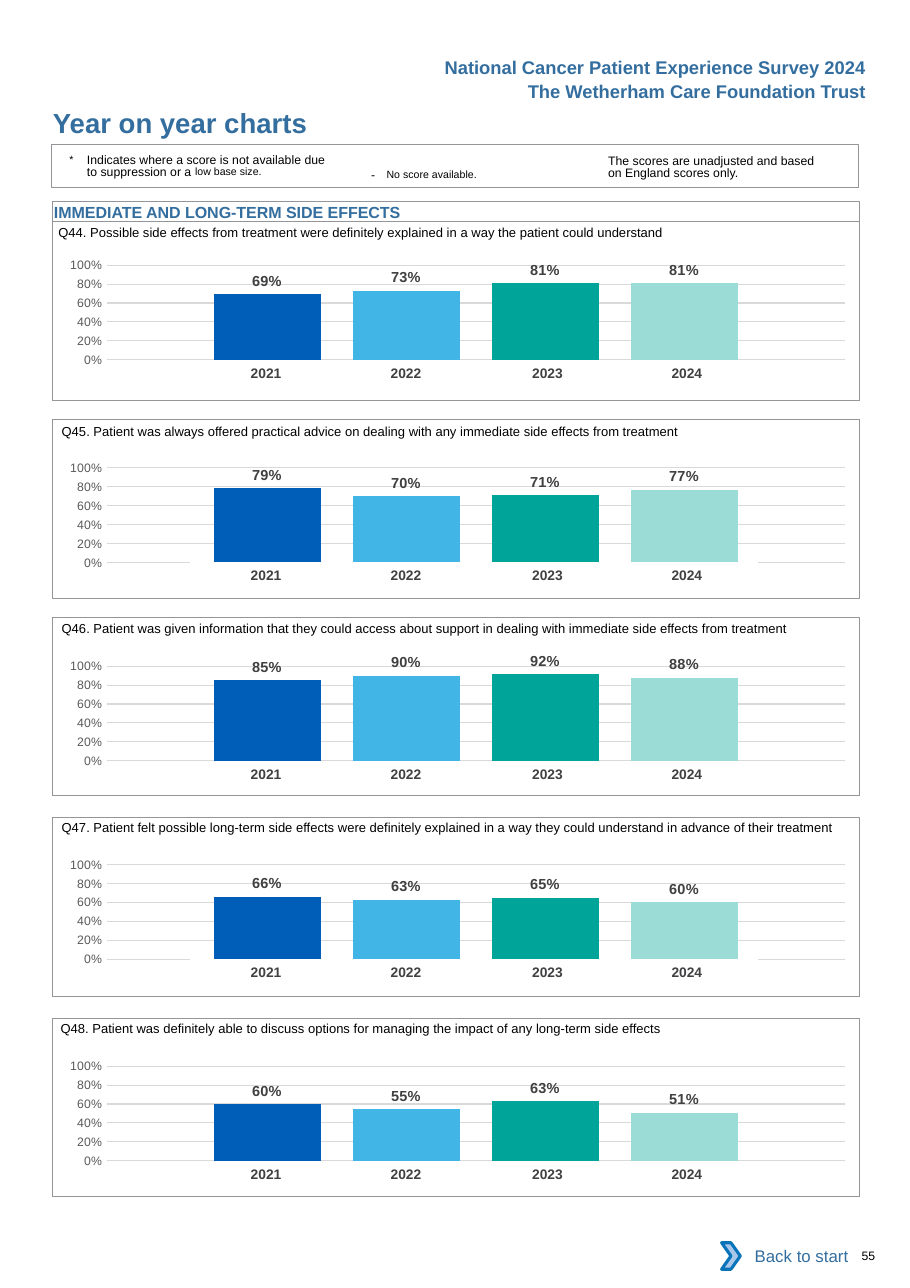
from dataclasses import dataclass

from lxml import etree
from pptx import Presentation, util as u
from pptx.chart.data import CategoryChartData
from pptx.dml.color import RGBColor
from pptx.enum import chart as ch, shapes, text
from pptx.oxml.ns import qn


@dataclass(frozen=True)
class Theme:
    font: str = "Arial"
    heading: str = "336E9F"
    ink: str = "000000"
    frame: str = "939598"
    year: str = "414042"
    label: str = "404040"
    axis: str = "595959"
    grid: str = "D9D9D9"
    white: str = "FFFFFF"
    arrow: str = "A8C7E9"
    arrow_edge: str = "0A74BB"
    bars: tuple = ("005EB8", "41B6E6", "00A499", "9CDCD7")
    title_size: float = 18
    banner_size: float = 12
    section_size: float = 10.5
    link_size: float = 11
    question_size: float = 8.5
    note_size: float = 8
    raised_size: float = 12
    label_size: float = 9.5
    year_size: float = 9


THEME = Theme()
YEARS = ("2021", "2022", "2023", "2024")
YEAR_WIDTHS = (1.27, 1.27, 1.34, 1.27)
YEAR_RIGHT_INSETS = (0, 0, 0.04, 0.12)
PANEL_LEFT, PANEL_WIDTH, PANEL_HEIGHT = 0.48, 7.32, 1.62
PLOT_AREA = {"x": 0.079, "y": 0.145, "w": 0.915, "h": 0.666}

# question, scores, frame top, chart top, question left, question top
PANELS = (
    ("Q44. Possible side effects from treatment were definitely explained in a way "
     "the patient could understand", (0.69, 0.73, 0.81, 0.81), 2.01, 2.22, 0.53, 1.95),
    ("Q45. Patient was always offered practical advice on dealing with any immediate "
     "side effects from treatment", (0.79, 0.70, 0.71, 0.77), 3.81, 4.06, 0.56, 3.75),
    ("Q46. Patient was given information that they could access about support in dealing "
     "with immediate side effects from treatment", (0.85, 0.90, 0.92, 0.88), 5.60, 5.86, 0.56, 5.54),
    ("Q47. Patient felt possible long-term side effects were definitely explained in a way "
     "they could understand in advance of their treatment", (0.66, 0.63, 0.65, 0.60), 7.42, 7.66, 0.56, 7.35),
    ("Q48. Patient was definitely able to discuss options for managing the impact of any "
     "long-term side effects", (0.60, 0.55, 0.63, 0.51), 9.24, 9.49, 0.55, 9.17),
)


def inches(*lengths):
    return [u.Inches(length) for length in lengths]


def rgb(color):
    return RGBColor.from_string(color)


def style_font(font, size, color, bold=False):
    font.name, font.size, font.bold = THEME.font, u.Pt(size), bold
    font.color.rgb = rgb(color)


def set_insets(holder, left, top, right, bottom):
    """Set the margins of a text frame or a table cell."""
    holder.margin_left, holder.margin_top, holder.margin_right, holder.margin_bottom = inches(
        left, top, right, bottom)


def write(frame, words, size, color, bold=False, align=text.PP_ALIGN.LEFT,
          insets=(0, 0, 0, 0), anchor=text.MSO_ANCHOR.TOP):
    set_insets(frame, *insets)
    frame.word_wrap, frame.vertical_anchor = True, anchor
    paragraph = frame.paragraphs[0]
    paragraph.text, paragraph.alignment = words, align
    style_font(paragraph.font, size, color, bold)
    return paragraph


def add_text(slide, area, words, size, color, **options):
    frame = slide.shapes.add_textbox(*inches(*area)).text_frame
    return write(frame, words, size, color, **options)


def add_outline(slide, area, line=None, width=0.5, fill=None, kind=shapes.MSO_SHAPE.RECTANGLE):
    outline = slide.shapes.add_shape(kind, *inches(*area))
    outline.shadow.inherit = False
    if fill:
        outline.fill.solid()
        outline.fill.fore_color.rgb = rgb(fill)
    else:
        outline.fill.background()
    if line:
        outline.line.color.rgb = rgb(line)
        outline.line.width = u.Pt(width)
    else:
        outline.line.fill.background()
    return outline


def hang(paragraph, indent):
    """Hang the paragraph so that its mark stands left of the text."""
    properties = paragraph._p.get_or_add_pPr()
    properties.set("marL", str(u.Inches(indent)))
    properties.set("indent", str(-u.Inches(indent)))


def add_raised(paragraph, words, percent):
    run = paragraph.add_run()
    run.text = words
    run.font.size = u.Pt(THEME.raised_size)
    run.font._element.set("baseline", str(percent * 1000))


def add_run(paragraph, words):
    paragraph.add_run().text = words


def add_notes(slide):
    size, ink = THEME.note_size, THEME.ink
    insets = (0, 0.03, 0, 0)
    unadjusted = add_text(slide, (5.52, 1.38, 2.01, 0.27),
                          "The scores are unadjusted and based on England scores only.",
                          size, ink, insets=insets)
    no_score = add_text(slide, (3.27, 1.41, 1.83, 0.24), "-\t", size, ink,
                        insets=(0.1, 0.05, 0.1, 0.05))
    hang(no_score, 0.14)
    add_raised(no_score, "No score available.", 3)
    suppressed = add_text(slide, (0.63, 1.38, 2.4, 0.27), "", size, ink, insets=insets)
    hang(suppressed, 0.16)
    add_raised(suppressed, "*\t", 3)
    add_run(suppressed, "Indicates where a score is not available due to suppression or a ")
    add_raised(suppressed, "low base size.", 7)
    for note in (unadjusted, suppressed):
        note.line_spacing = u.Pt(8.1)
    add_outline(slide, (0.47, 1.31, PANEL_WIDTH, 0.39), THEME.frame, 0.75)


def place_plot(chart):
    """Fix the inner plot area as fractions of the chart."""
    plot_area = chart._chartSpace.chart.plotArea
    for old in plot_area.findall(qn("c:layout")):
        plot_area.remove(old)
    layout = etree.Element(qn("c:layout"))
    manual = etree.SubElement(layout, qn("c:manualLayout"))
    settings = {"layoutTarget": "inner", "xMode": "edge", "yMode": "edge", **PLOT_AREA}
    for name, value in settings.items():
        etree.SubElement(manual, qn(f"c:{name}")).set("val", str(value))
    plot_area.insert(0, layout)


def add_score_chart(slide, top, scores):
    data = CategoryChartData(number_format="0%")
    data.categories = ["1"]
    for number, score in enumerate(scores, 1):
        data.add_series(f"Series {number}", [score])
    chart = slide.shapes.add_chart(ch.XL_CHART_TYPE.COLUMN_CLUSTERED,
                                   *inches(0.39, top, PANEL_WIDTH, 1.29), data).chart
    chart.has_title = chart.has_legend = False
    style_font(chart.font, THEME.note_size, THEME.axis)
    chart.category_axis.visible = False
    axis = chart.value_axis
    axis.minimum_scale, axis.maximum_scale, axis.major_unit = 0, 1, 0.2
    axis.major_tick_mark = ch.XL_TICK_MARK.NONE
    axis.format.line.fill.background()
    axis.major_gridlines.format.line.color.rgb = rgb(THEME.grid)
    axis.major_gridlines.format.line.width = u.Pt(0.75)
    axis.tick_labels.number_format = "0%"
    axis.tick_labels.number_format_is_linked = False
    plot = chart.plots[0]
    plot.gap_width, plot.overlap, plot.vary_by_categories = 200, -30, False
    for series, color in zip(plot.series, THEME.bars):
        series.format.fill.solid()
        series.format.fill.fore_color.rgb = rgb(color)
        labels = series.data_labels
        labels.show_value, labels.position = True, ch.XL_LABEL_POSITION.OUTSIDE_END
        labels.number_format, labels.number_format_is_linked = "0%", False
        style_font(labels.font, THEME.label_size, THEME.label, True)
    place_plot(chart)


def add_year_row(slide, top):
    years = slide.shapes.add_table(1, len(YEARS), *inches(1.73, top, sum(YEAR_WIDTHS), 0.27)).table
    years.first_row = years.horz_banding = False
    for column, (year, width, inset) in enumerate(zip(YEARS, YEAR_WIDTHS, YEAR_RIGHT_INSETS)):
        years.columns[column].width = u.Inches(width)
        cell = years.cell(0, column)
        cell.fill.background()
        set_insets(cell, 0.1, 0.05, inset, 0.05)
        paragraph = cell.text_frame.paragraphs[0]
        paragraph.text, paragraph.alignment = year, text.PP_ALIGN.CENTER
        style_font(paragraph.font, THEME.year_size, THEME.year, True)


def add_panel(slide, question, scores, frame_top, chart_top, question_left, question_top):
    add_score_chart(slide, chart_top, scores)
    add_year_row(slide, chart_top + 1.05)
    add_text(slide, (question_left, question_top, 7.24, 0.24), question,
             THEME.question_size, THEME.ink, insets=(0, 0.09, 0, 0))
    add_outline(slide, (PANEL_LEFT, frame_top, PANEL_WIDTH, PANEL_HEIGHT), THEME.frame)


def add_headings(slide):
    title = slide.shapes.title
    title.left, title.top, title.width, title.height = inches(0.48, 0.96, 4.5, 0.3)
    write(title.text_frame, "Year on year charts", THEME.title_size, THEME.heading, bold=True)
    for top, words in ((0.46, "National Cancer Patient Experience Survey 2024"),
                       (0.68, "The Wetherham Care Foundation Trust")):
        add_text(slide, (3.72, top, 4.24, 0.3), words, THEME.banner_size, THEME.heading, bold=True,
                 align=text.PP_ALIGN.RIGHT, insets=(0.1, 0.05, 0.1, 0.05))
    section = add_outline(slide, (PANEL_LEFT, 1.83, PANEL_WIDTH, 0.18), THEME.frame)
    write(section.text_frame, "IMMEDIATE AND LONG-TERM SIDE EFFECTS", THEME.section_size,
          THEME.heading, bold=True, insets=(0.01, 0.01, 0, 0))


def add_footer(slide):
    back = add_outline(slide, (6.62, 11.19, 1.18, 0.42), fill=THEME.white)
    write(back.text_frame, "Back to start", THEME.link_size, THEME.heading, align=text.PP_ALIGN.RIGHT,
          insets=(0.1, 0.05, 0.1, 0.05), anchor=text.MSO_ANCHOR.MIDDLE)
    add_outline(slide, (6.55, 11.28, 0.17, 0.24), THEME.arrow_edge, 2, THEME.arrow,
                shapes.MSO_SHAPE.CHEVRON)
    add_text(slide, (7.82, 11.33, 0.41, 0.13), "55", THEME.note_size, THEME.ink)


def main():
    deck = Presentation()
    deck.slide_width, deck.slide_height = inches(8.26, 11.69)
    slide = deck.slides.add_slide(deck.slide_layouts[5])
    add_headings(slide)
    add_notes(slide)
    for panel in PANELS:
        add_panel(slide, *panel)
    add_footer(slide)
    deck.save("out.pptx")


if __name__ == "__main__":
    main()
